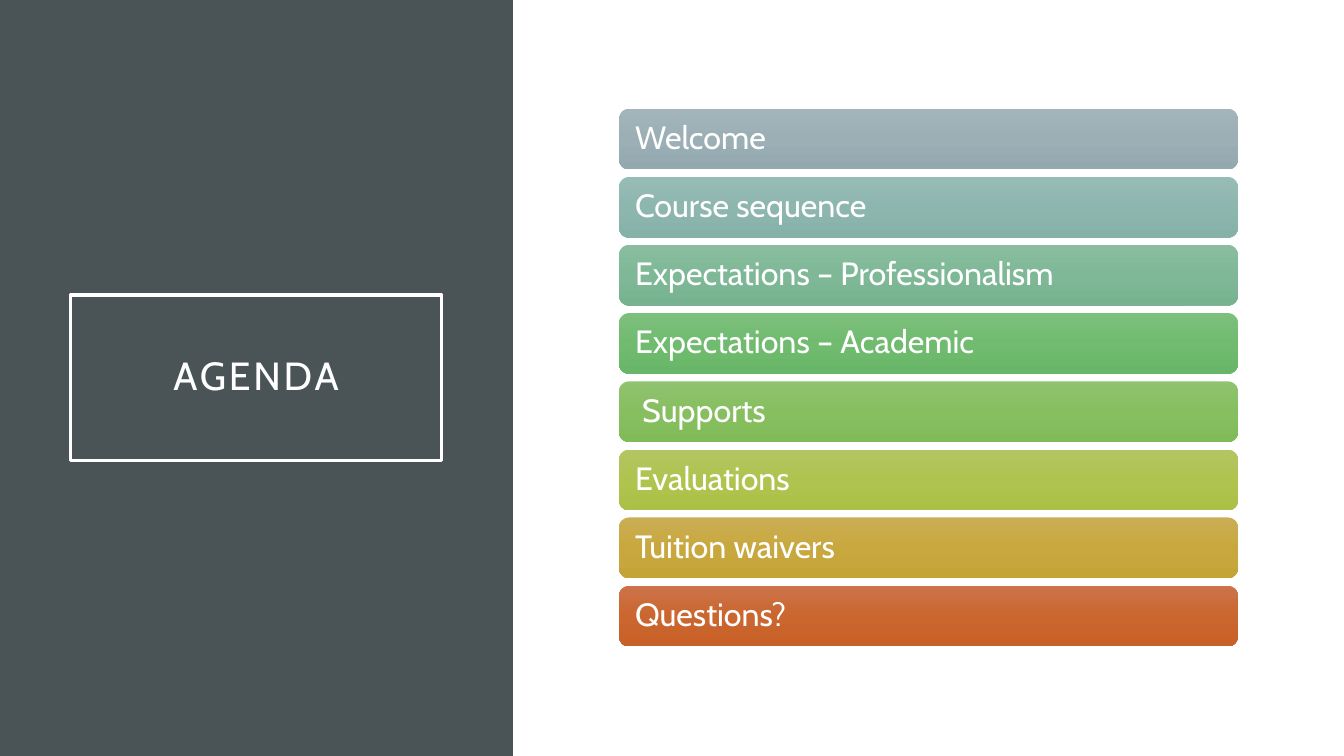
import copy
import pptx
import pptx.util
import pptx.dml.color
import pptx.enum.shapes
import pptx.enum.text
import pptx.oxml.ns

Cm, Pt = pptx.util.Cm, pptx.util.Pt
KIND = pptx.enum.shapes.MSO_SHAPE
ALIGN = pptx.enum.text.PP_ALIGN
COLORS = {"panel": "4A5356", "white": "FFFFFF"}

# Agenda items: wording and gradient colours from top to bottom
ITEMS = [
    ("Welcome", ("A3B5BB", "9BAFB5", "93A9AF")),
    ("Course sequence", ("97BBB5", "8DB6AF", "86B1A9")),
    ("Expectations – Professionalism", ("8ABD9F", "7FB897", "77B390")),
    ("Expectations – Academic", ("7DBF7D", "70BB70", "68B768")),
    (" Supports", ("90C26F", "87BF60", "81BB58")),
    ("Evaluations", ("B3C562", "AFC34F", "ABC047")),
    ("Tuition waivers", ("CAAD55", "C8A83E", "C5A437")),
    ("Questions? ", ("CC734B", "CB662F", "C86128")),
]


def color(code):
    return pptx.dml.color.RGBColor.from_string(code)


class Deck:
    font = "Cabin"

    def __init__(self):
        self.prs = pptx.Presentation()
        self.prs.slide_width = Cm(33.87)
        self.prs.slide_height = Cm(19.05)
        self.slide = self.prs.slides.add_slide(self.prs.slide_layouts[6])

    def shape(self, kind, left, top, width, height):
        shape = self.slide.shapes.add_shape(
            kind, Cm(left), Cm(top), Cm(width), Cm(height))
        shape.shadow.inherit = False
        shape.line.fill.background()
        return shape

    def text(self, shape, words, size, align, inset):
        frame = shape.text_frame
        frame.text = words
        frame.word_wrap = True
        frame.vertical_anchor = pptx.enum.text.MSO_ANCHOR.MIDDLE
        frame.margin_left = frame.margin_right = Cm(inset)
        frame.margin_top = frame.margin_bottom = Cm(0.25)
        para = frame.paragraphs[0]
        para.alignment = align
        para.line_spacing = 0.9
        run = para.runs[0]
        run.font.name = self.font
        run.font.size = Pt(size)
        run.font.color.rgb = color(COLORS["white"])
        return run

    def panel(self, left, top, width, height):
        shape = self.shape(KIND.RECTANGLE, left, top, width, height)
        shape.fill.solid()
        shape.fill.fore_color.rgb = color(COLORS["panel"])

    def title(self, words, left, top, width, height):
        shape = self.shape(KIND.RECTANGLE, left, top, width, height)
        shape.fill.background()
        shape.line.color.rgb = color(COLORS["white"])
        shape.line.width = Pt(2.5)
        run = self.text(shape, words, 28, ALIGN.CENTER, 0.5)
        run.font._element.set("spc", "200")

    def bar(self, words, shades, left, top, width, height):
        shape = self.shape(KIND.ROUNDED_RECTANGLE, left, top, width, height)
        shape.fill.gradient()
        shape.fill.gradient_angle = 270
        # A third stop in the middle of the gradient
        first = shape._element.spPr.find(
            ".//" + pptx.oxml.ns.qn("a:gs"))
        first.addnext(copy.deepcopy(first))
        for i, stop in enumerate(shape.fill.gradient_stops):
            stop.position = i / 2
            stop.color.rgb = color(shades[i])
        self.text(shape, words, 23, ALIGN.LEFT, 0.33)


def main():
    deck = Deck()

    # Left panel with the framed title
    deck.panel(0, 0, 12.93, 19.05)
    deck.title("AGENDA", 1.78, 7.44, 9.35, 4.17)

    # Evenly spaced agenda bars
    top, step = 2.74, 1.717
    for i, (words, shades) in enumerate(ITEMS):
        deck.bar(words, shades, 15.6, round(top + i * step, 2), 15.6, 1.53)

    deck.prs.save("out.pptx")


if __name__ == "__main__":
    main()
